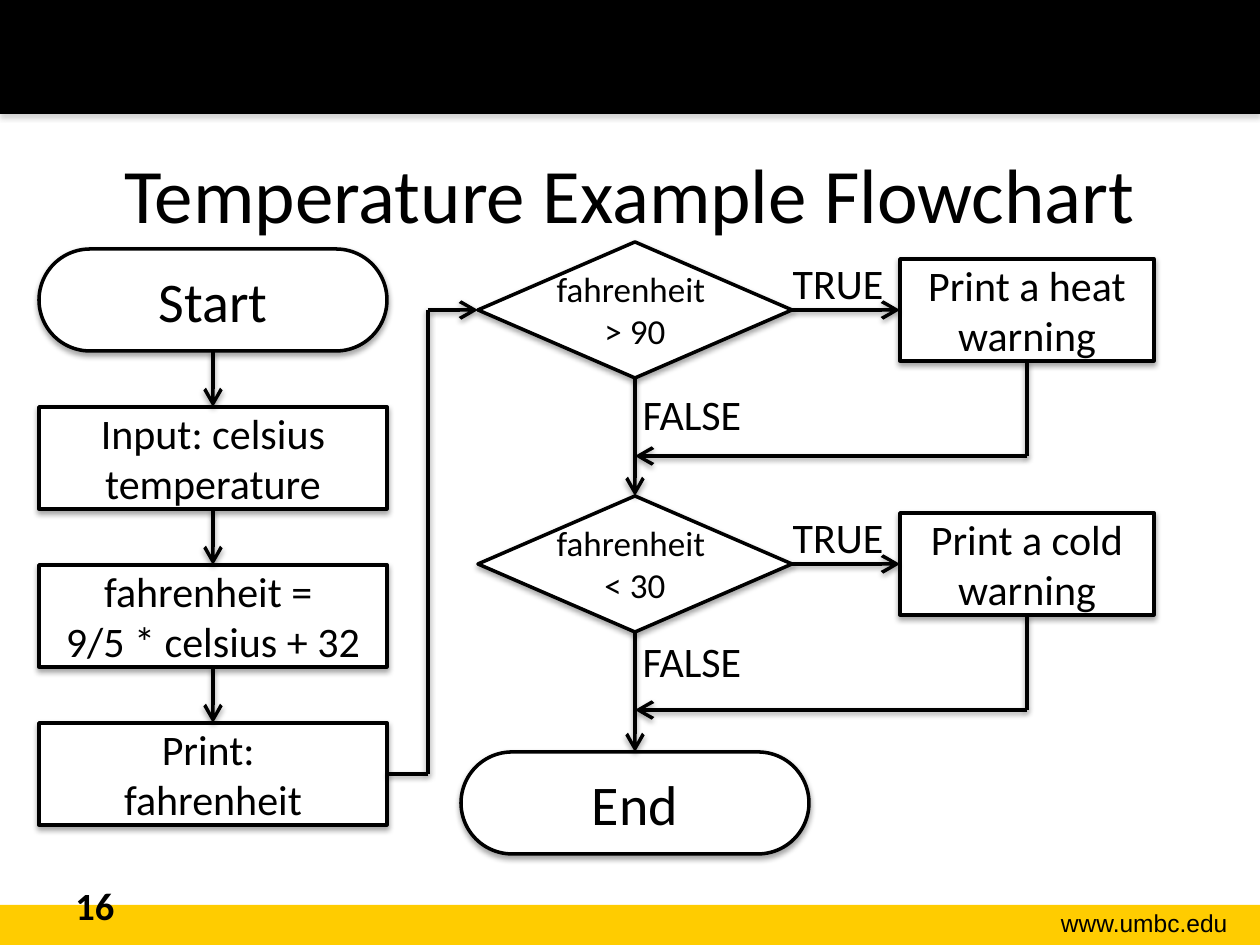
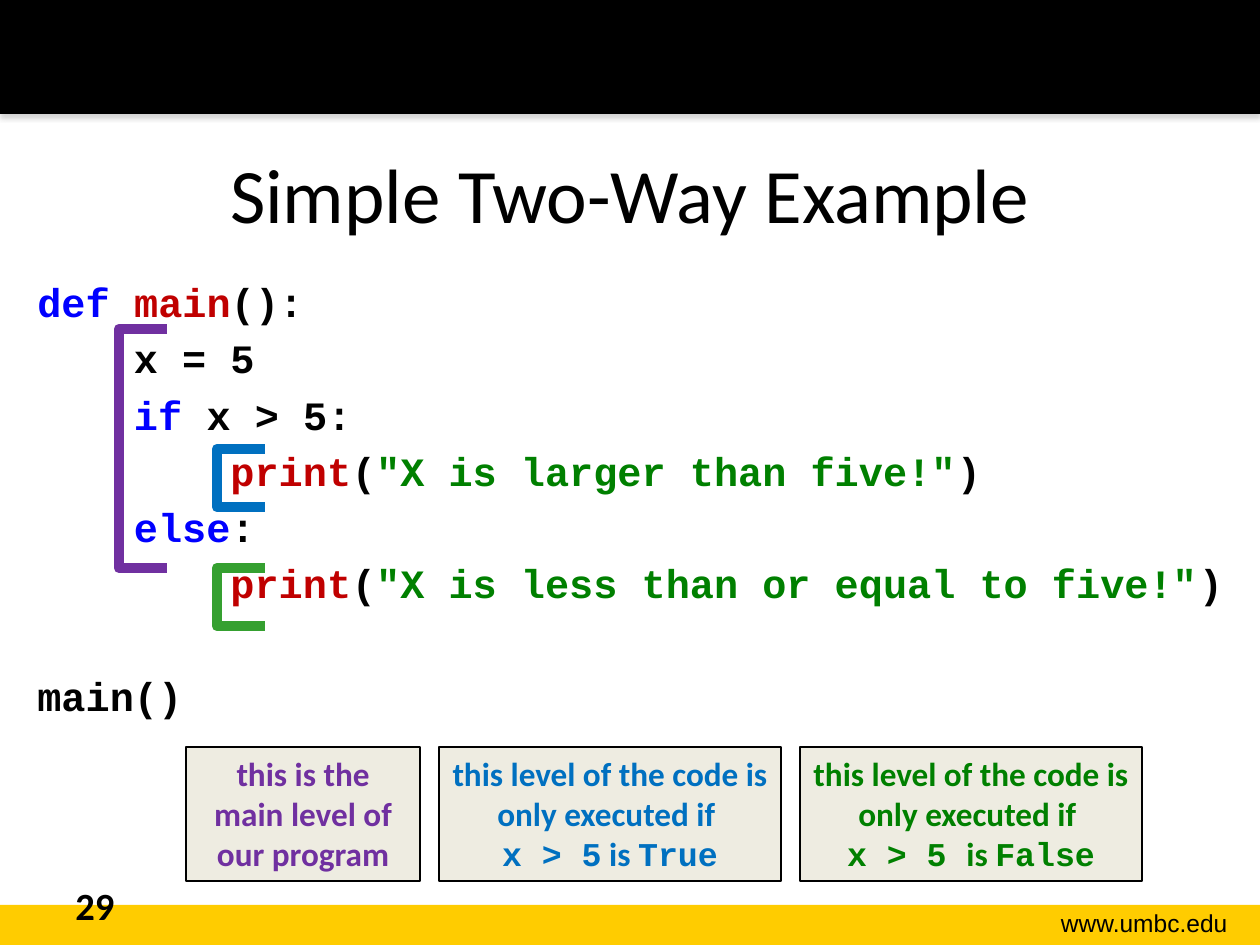
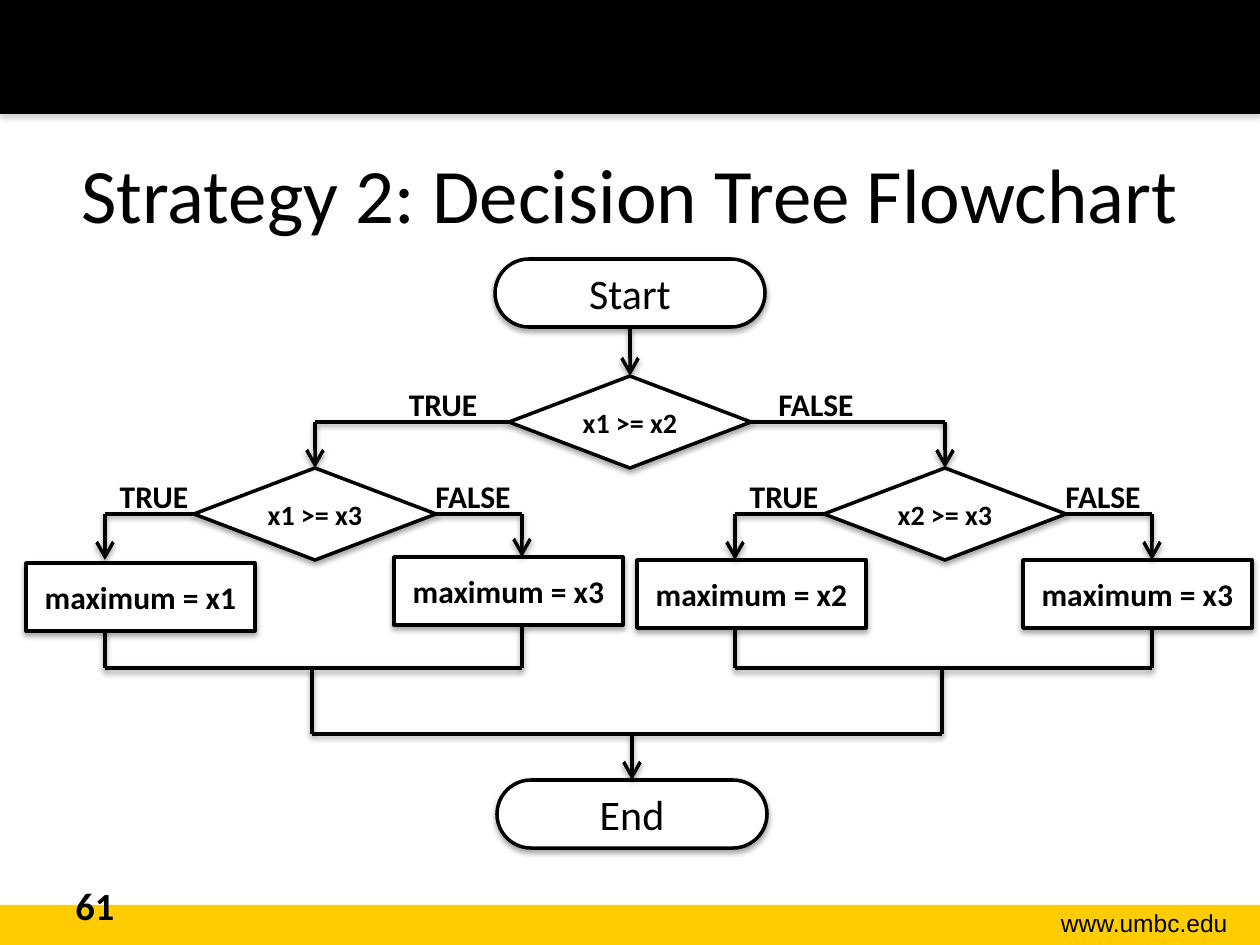
import pptx
import pptx.util
import pptx.dml.color
import pptx.enum.shapes
import pptx.enum.text
import pptx.oxml
import pptx.oxml.ns

PX = 914400 / 126
COLORS = {
    "black": "000000", "white": "FFFFFF", "gold": "FFCC00", "gray": "808080",
    "purple": "7030A0", "blue": "0070C0", "leaf": "35A030", "green": "008000",
    "keyword": "0000FF", "name": "C00000", "beige": "EEECE1",
}
TEXT_FONT, CODE_FONT, FOOTER_FONT = "Calibri", "Courier New", "Arial"
CODE_GAP, CODE_PITCH = 4.6, 32.2
SHAPE = pptx.enum.shapes.MSO_SHAPE
ALIGN = pptx.enum.text.PP_ALIGN
ANCHOR = pptx.enum.text.MSO_ANCHOR
TOP, LEFT, BOTTOM, RIGHT = range(4)


def px(*lengths):
    return [pptx.util.Emu(round(length * PX)) for length in lengths]


def rgb(color):
    return pptx.dml.color.RGBColor.from_string(COLORS[color])


def style(paragraph, size, color="black", bold=False, font=TEXT_FONT, align=None):
    paragraph.alignment = align
    paragraph.font.size = pptx.util.Pt(size)
    paragraph.font.name = font
    paragraph.font.bold = bold
    paragraph.font.color.rgb = rgb(color)


def add_text(slide, box, text, size, anchor=ANCHOR.TOP, **text_style):
    frame = slide.shapes.add_textbox(*px(*box)).text_frame
    frame.word_wrap = True
    frame.vertical_anchor = anchor
    frame.paragraphs[0].text = text
    style(frame.paragraphs[0], size, **text_style)


def cast_shadow(effects, color="black", distance=23000, percent=35):
    effects.append(pptx.oxml.parse_xml(
        f'<a:outerShdw {pptx.oxml.ns.nsdecls("a")} blurRad="40000" dist="{distance}" '
        f'dir="5400000" rotWithShape="0"><a:srgbClr val="{COLORS[color]}">'
        f'<a:alpha val="{percent * 1000}"/></a:srgbClr></a:outerShdw>'))


def add_shape(slide, kind, box, fill=None, line=None, width=2, shadow=None):
    shape = slide.shapes.add_shape(kind, *px(*box))
    if fill:
        shape.fill.solid()
        shape.fill.fore_color.rgb = rgb(fill)
    else:
        shape.fill.background()
    if line:
        shape.line.color.rgb = rgb(line)
        shape.line.width = pptx.util.Pt(width)
    else:
        shape.line.fill.background()
    shape.shadow.inherit = False
    if shadow:
        cast_shadow(shape._element.spPr.find(pptx.oxml.ns.qn("a:effectLst")), shadow)
    return shape


def add_node(slide, kind, box, text, size, bold=False):
    """Add one flowchart symbol with centred text."""
    node = add_shape(slide, kind, box, "white", "black", shadow="black")
    if kind == SHAPE.ROUNDED_RECTANGLE:
        node.adjustments[0] = 0.5
    frame = node.text_frame
    frame.word_wrap = kind != SHAPE.FLOWCHART_DECISION
    frame.vertical_anchor = ANCHOR.MIDDLE
    frame.paragraphs[0].text = text
    style(frame.paragraphs[0], size, bold=bold, align=ALIGN.CENTER)
    return node


def link(slide, start, end, arrow=False):
    """Draw a line; each end is an (x, y) point or a (shape, side) pair."""
    joined = [not isinstance(place[0], (int, float)) for place in (start, end)]
    first = (0, 0) if joined[0] else start
    last = (0, 0) if joined[1] else end
    connector = slide.shapes.add_connector(
        pptx.enum.shapes.MSO_CONNECTOR.STRAIGHT, *px(*first, *last))
    if joined[0]:
        connector.begin_connect(*start)
    if joined[1]:
        connector.end_connect(*end)
    connector.line.color.rgb = rgb("black")
    connector.line.width = pptx.util.Pt(2)
    properties = connector._element.spPr
    if arrow:
        line = properties.find(pptx.oxml.ns.qn("a:ln"))
        line.append(pptx.oxml.parse_xml(
            f'<a:tailEnd {pptx.oxml.ns.nsdecls("a")} type="arrow" w="lg" len="lg"/>'))
    effects = pptx.oxml.parse_xml(f'<a:effectLst {pptx.oxml.ns.nsdecls("a")}/>')
    cast_shadow(effects, distance=20000, percent=38)
    properties.append(effects)


def link_path(slide, *points, arrow=False):
    """Draw a chain of lines with the arrowhead on the last one."""
    for index, (start, end) in enumerate(zip(points, points[1:])):
        link(slide, start, end, arrow and index == len(points) - 2)


def add_base_slide(presentation, title, number):
    slide = presentation.slides.add_slide(presentation.slide_layouts[6])
    add_shape(slide, SHAPE.RECTANGLE, (0, 905, 1260, 40), "gold")
    add_shape(slide, SHAPE.RECTANGLE, (0, 0, 1260, 114), "black", shadow="gray")
    add_text(slide, (989, 902, 251, 43), "www.umbc.edu", 14,
             font=FOOTER_FONT, align=ALIGN.RIGHT)
    add_text(slide, (63, 114, 1134, 158), title, 44, ANCHOR.MIDDLE, align=ALIGN.CENTER)
    add_text(slide, (63, 876, 294, 50), str(number), 22, bold=True)
    return slide


def add_input_column(slide, left, top):
    """Stack the steps before the checks and return the last one."""
    steps = [
        (SHAPE.ROUNDED_RECTANGLE, "Start", 32),
        (SHAPE.RECTANGLE, "Input: celsius temperature", 24),
        (SHAPE.RECTANGLE, "fahrenheit = \n9/5 * celsius + 32", 24),
        (SHAPE.RECTANGLE, "Print: \nfahrenheit", 24),
    ]
    previous = None
    for index, (kind, text, size) in enumerate(steps):
        node = add_node(slide, kind, (left, top + 158 * index, 348, 102), text, size)
        if previous:
            link(slide, (previous, BOTTOM), (node, TOP), arrow=True)
        previous = node
    return previous


def add_check(slide, left, top, condition, warning, false_top):
    """Add a decision, its warning and the way back; return the decision."""
    check = add_node(slide, SHAPE.FLOWCHART_DECISION, (left, top, 314, 136), condition, 20)
    message = add_node(slide, SHAPE.RECTANGLE, (left + 422, top + 17, 254, 102), warning, 24)
    for text, x, y in (("TRUE", 259, 9), ("FALSE", 113, false_top)):
        add_text(slide, (left + x, top + y, 202, 63), text, 24, align=ALIGN.CENTER)
    link(slide, (check, RIGHT), (message, LEFT), arrow=True)
    merge = top + 214
    link_path(slide, (message, BOTTOM), (left + 549, merge), (left + 157, merge), arrow=True)
    return check


def build_temperature_slide(presentation):
    slide = add_base_slide(presentation, "Temperature Example Flowchart", 16)
    last_step = add_input_column(slide, 39, 249)
    heat = add_check(slide, 478, 242, "fahrenheit \n> 90", "Print a heat warning", 140)
    cold = add_check(slide, 478, 496, "fahrenheit \n< 30", "Print a cold warning", 133)
    end = add_node(slide, SHAPE.ROUNDED_RECTANGLE, (461, 752, 348, 102), "End", 32)
    link(slide, (heat, BOTTOM), (cold, TOP), arrow=True)
    link(slide, (cold, BOTTOM), (end, TOP), arrow=True)
    link_path(slide, (last_step, RIGHT), (428, 774), (428, 310), (heat, LEFT), arrow=True)


def add_code(slide, box, lines):
    """Write lines of (text, colour) tokens; an empty line becomes space before the next."""
    frame = slide.shapes.add_textbox(*px(*box)).text_frame
    frame.word_wrap = True
    gap = CODE_GAP
    for index, tokens in enumerate(lines):
        if not tokens:
            gap += CODE_PITCH
            continue
        paragraph = frame.add_paragraph() if index else frame.paragraphs[0]
        if index:
            paragraph.space_before = pptx.util.Pt(gap)
        gap = CODE_GAP
        style(paragraph, 23, bold=True, font=CODE_FONT)
        for text, color in tokens:
            run = paragraph.add_run()
            run.text = text
            run.font.color.rgb = rgb(color)


def add_note(slide, box, color, sentence, condition=()):
    """Add a boxed note; condition holds (text, font) runs for its last line."""
    note = add_shape(slide, SHAPE.RECTANGLE, box, "beige", "black", 0.75)
    note.text_frame.word_wrap = True
    note.text_frame.vertical_anchor = ANCHOR.TOP
    paragraph = note.text_frame.paragraphs[0]
    paragraph.text = sentence
    style(paragraph, 19, color, bold=True, align=ALIGN.CENTER)
    for text, font in condition:
        run = paragraph.add_run()
        run.text = text
        run.font.name = font


def build_two_way_slide(presentation):
    slide = add_base_slide(presentation, "Simple Two-Way Example", 29)
    add_code(slide, (25, 271, 1221, 573), [
        [("def ", "keyword"), ("main", "name"), ("():", "black")],
        [("    x = 5", "black")],
        [("    if", "keyword"), (" x > 5:", "black")],
        [("        print", "name"), ("(", "black"),
         ('"X is larger than five!"', "green"), (")", "black")],
        [("    else", "keyword"), (":", "black")],
        [("        print", "name"), ("(", "black"),
         ('"X is less than or equal to five!"', "green"), (")", "black")],
        [],
        [("main()", "black")],
    ])
    for left, top, height, color in ((119, 329, 239, "purple"), (217, 449, 58, "blue"),
                                     (217, 568, 58, "leaf")):
        bracket = add_shape(slide, SHAPE.LEFT_BRACKET, (left, top, 48, height),
                            line=color, width=6)
        bracket.adjustments[0] = 0

    branch = "this level of the code is only executed if \n"
    add_note(slide, (186, 747, 234, 134), "purple", "this is the main level of our program")
    add_note(slide, (439, 747, 342, 134), "blue", branch,
             [("x > 5", CODE_FONT), (" is ", TEXT_FONT), ("True", CODE_FONT)])
    add_note(slide, (800, 747, 342, 134), "green", branch,
             [("x > 5 ", CODE_FONT), ("is ", TEXT_FONT), ("False", CODE_FONT)])


def add_branch_label(slide, left, top, text):
    add_text(slide, (left, top, 156, 50), text, 18, bold=True, align=ALIGN.CENTER)


def add_tree_check(slide, center, top, condition):
    return add_node(slide, SHAPE.FLOWCHART_DECISION, (center - 121, top, 242, 92),
                    condition, 16, bold=True)


def add_subtree(slide, center, top, condition, leaves):
    """Add a decision with two (text, x, y) leaves that merge again; return the decision."""
    check = add_tree_check(slide, center, top, condition)
    add_branch_label(slide, center - 239, top + 3, "TRUE")
    add_branch_label(slide, center + 80, top + 3, "FALSE")
    middle, merge = top + 46, top + 200
    drops = (center - 210, center + 207)
    for (text, x, y), drop, side in zip(leaves, drops, (LEFT, RIGHT)):
        add_node(slide, SHAPE.RECTANGLE, (center + x, top + y, 229, 68), text, 18, bold=True)
        link_path(slide, (check, side), (drop, middle), (drop, top + min(y, 92)), arrow=True)
        link(slide, (drop, top + y + 68), (drop, merge))
    link(slide, (drops[0], merge), (drops[1], merge))
    link(slide, (center - 3, merge), (center - 3, merge + 66))
    return check


def build_decision_tree_slide(presentation):
    slide = add_base_slide(presentation, "Strategy 2: Decision Tree Flowchart", 61)
    start = add_node(slide, SHAPE.ROUNDED_RECTANGLE, (495, 259, 270, 68), "Start", 24)
    root = add_tree_check(slide, 630, 376, "x1 >= x2")
    link(slide, (start, BOTTOM), (root, TOP), arrow=True)
    add_branch_label(slide, 365, 379, "TRUE")
    add_branch_label(slide, 738, 379, "FALSE")
    subtrees = [
        (315, LEFT, "x1 >= x3", [("maximum = x1", -289, 95), ("maximum = x3", 79, 89)]),
        (945, RIGHT, "x2 >= x3", [("maximum = x2", -308, 92), ("maximum = x3", 78, 92)]),
    ]
    for center, side, condition, leaves in subtrees:
        check = add_subtree(slide, center, 468, condition, leaves)
        link_path(slide, (root, side), (center, 422), (check, TOP), arrow=True)
    link(slide, (312, 734), (942, 734))
    end = add_node(slide, SHAPE.ROUNDED_RECTANGLE, (497, 780, 270, 68), "End", 24)
    link(slide, (632, 734), (end, TOP), arrow=True)


def main():
    presentation = pptx.Presentation()
    presentation.slide_width, presentation.slide_height = px(1260, 945)
    build_temperature_slide(presentation)
    build_two_way_slide(presentation)
    build_decision_tree_slide(presentation)
    presentation.save("out.pptx")


if __name__ == "__main__":
    main()
